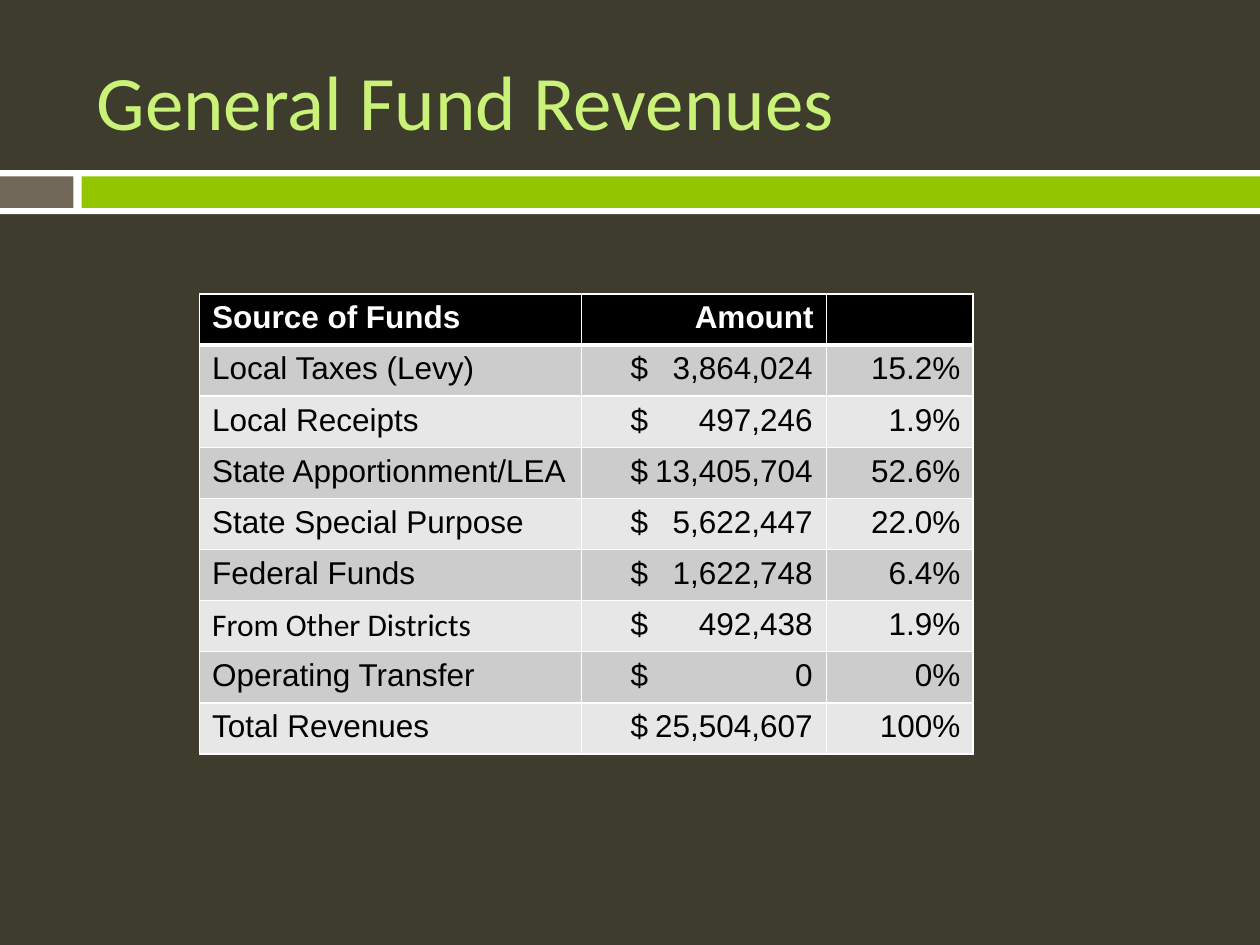
from dataclasses import dataclass

from lxml import etree
from pptx import Presentation
from pptx import util as u
from pptx.dml import color
from pptx.enum import shapes, text
from pptx.oxml import ns

COLORS = {
    "background": "3E3D2D",
    "white": "FFFFFF",
    "black": "000000",
    "stone": "71685A",
    "green": "94C600",
    "title": "CAF278",
    "odd_row": "CCCCCC",
    "even_row": "E7E7E7",
}
TITLE_FONT = {"name": "Calibri", "size": u.Pt(44)}
HEADER_FONT = {"name": "Arial", "size": u.Pt(18), "bold": True}
BODY_FONT = {"name": "Arial", "size": u.Pt(18), "bold": False}
TITLE_FRAME = {"word_wrap": True, "vertical_anchor": text.MSO_ANCHOR.MIDDLE}

COLUMN_WIDTHS = (218.4, 139.8, 83.8)
ROW_HEIGHT = 29.2
DOLLAR_INSET = 28
AMOUNT_TAB = 104


@dataclass(frozen=True)
class Band:
    left: float
    top: float
    width: float
    height: float
    fill: str


@dataclass(frozen=True)
class Revenue:
    source: str
    amount: str
    share: str
    font: str = "Arial"


BANDS = (
    Band(0, 97.2, 720, 25.2, "white"),
    Band(0, 100.8, 42, 18, "stone"),
    Band(46.6, 100.8, 673.4, 18, "green"),
)
REVENUES = (
    Revenue("Local Taxes (Levy)", "3,864,024", "15.2%"),
    Revenue("Local Receipts", "497,246", "1.9%"),
    Revenue("State Apportionment/LEA", "13,405,704", "52.6%"),
    Revenue("State Special Purpose", "5,622,447", "22.0%"),
    Revenue("Federal Funds", "1,622,748", "6.4%"),
    Revenue("From Other Districts", "492,438", "1.9%", "Calibri"),
    Revenue("Operating Transfer", "0", "0%"),
    Revenue("Total Revenues", "25,504,607", "100%"),
)


def rgb(name: str) -> color.RGBColor:
    return color.RGBColor.from_string(COLORS[name])


def apply_format(target, values: dict) -> None:
    for name, value in values.items():
        setattr(target, name, value)


def paint(target, name: str) -> None:
    target.fill.solid()
    target.fill.fore_color.rgb = rgb(name)


def write(para, words: str, font: dict, color_name: str) -> None:
    span = para.add_run()
    span.text = words
    apply_format(span.font, font)
    span.font.color.rgb = rgb(color_name)


def draw_band(page, band: Band) -> None:
    bounds = map(u.Pt, (band.left, band.top, band.width, band.height))
    box = page.shapes.add_shape(shapes.MSO_SHAPE.RECTANGLE, *bounds)
    box.shadow.inherit = False
    paint(box, band.fill)
    box.line.fill.background()


def draw_title(page, words: str) -> None:
    box = page.shapes.add_textbox(u.Pt(48.2), u.Pt(18), u.Pt(642), u.Pt(78))
    apply_format(box.text_frame, TITLE_FRAME)
    write(box.text_frame.paragraphs[0], words, TITLE_FONT, "title")


def draw_borders(cell, top: float, bottom: float) -> None:
    properties = cell._tc.get_or_add_tcPr()
    widths = {"lnL": 1, "lnR": 1, "lnT": top, "lnB": bottom}
    for position, (side, width) in enumerate(widths.items()):
        line = etree.Element(ns.qn(f"a:{side}"), w=str(u.Pt(width)))
        fill = etree.SubElement(line, ns.qn("a:solidFill"))
        etree.SubElement(fill, ns.qn("a:srgbClr"), val=COLORS["white"])
        properties.insert(position, line)


def add_right_tab(para, position: float) -> None:
    tabs = etree.SubElement(para._p.get_or_add_pPr(), ns.qn("a:tabLst"))
    etree.SubElement(tabs, ns.qn("a:tab"), pos=str(u.Pt(position)), algn="r")


def draw_table(page, revenues: tuple[Revenue, ...]) -> None:
    row_count = len(revenues) + 1
    frame = page.shapes.add_table(
        row_count, len(COLUMN_WIDTHS), u.Pt(114), u.Pt(168),
        u.Pt(sum(COLUMN_WIDTHS)), u.Pt(ROW_HEIGHT * row_count),
    )
    table = frame.table
    for column, width in zip(table.columns, COLUMN_WIDTHS):
        column.width = u.Pt(width)
    for row in table.rows:
        row.height = u.Pt(ROW_HEIGHT)

    for column, words in enumerate(("Source of Funds", "Amount", "")):
        cell = table.cell(0, column)
        paint(cell, "black")
        draw_borders(cell, 1, 3)
        if words:
            para = cell.text_frame.paragraphs[0]
            para.alignment = text.PP_ALIGN.RIGHT if column else text.PP_ALIGN.LEFT
            write(para, words, HEADER_FONT, "white")

    for row, revenue in enumerate(revenues, start=1):
        cells = [table.cell(row, column) for column in range(len(COLUMN_WIDTHS))]
        paras = [cell.text_frame.paragraphs[0] for cell in cells]
        for cell in cells:
            paint(cell, "odd_row" if row % 2 else "even_row")
            draw_borders(cell, 3 if row == 1 else 1, 1)
        write(paras[0], revenue.source, BODY_FONT | {"name": revenue.font}, "black")
        cells[1].margin_left = u.Pt(DOLLAR_INSET)
        add_right_tab(paras[1], AMOUNT_TAB)
        write(paras[1], f"$\t{revenue.amount}", BODY_FONT, "black")
        paras[2].alignment = text.PP_ALIGN.RIGHT
        write(paras[2], revenue.share, BODY_FONT, "black")


def main() -> None:
    deck = Presentation()
    apply_format(deck, {"slide_width": u.Pt(720), "slide_height": u.Pt(540)})
    page = deck.slides.add_slide(deck.slide_layouts[6])
    paint(page.background, "background")
    for band in BANDS:
        draw_band(page, band)
    draw_title(page, "General Fund Revenues")
    draw_table(page, REVENUES)
    deck.save("out.pptx")


if __name__ == "__main__":
    main()
